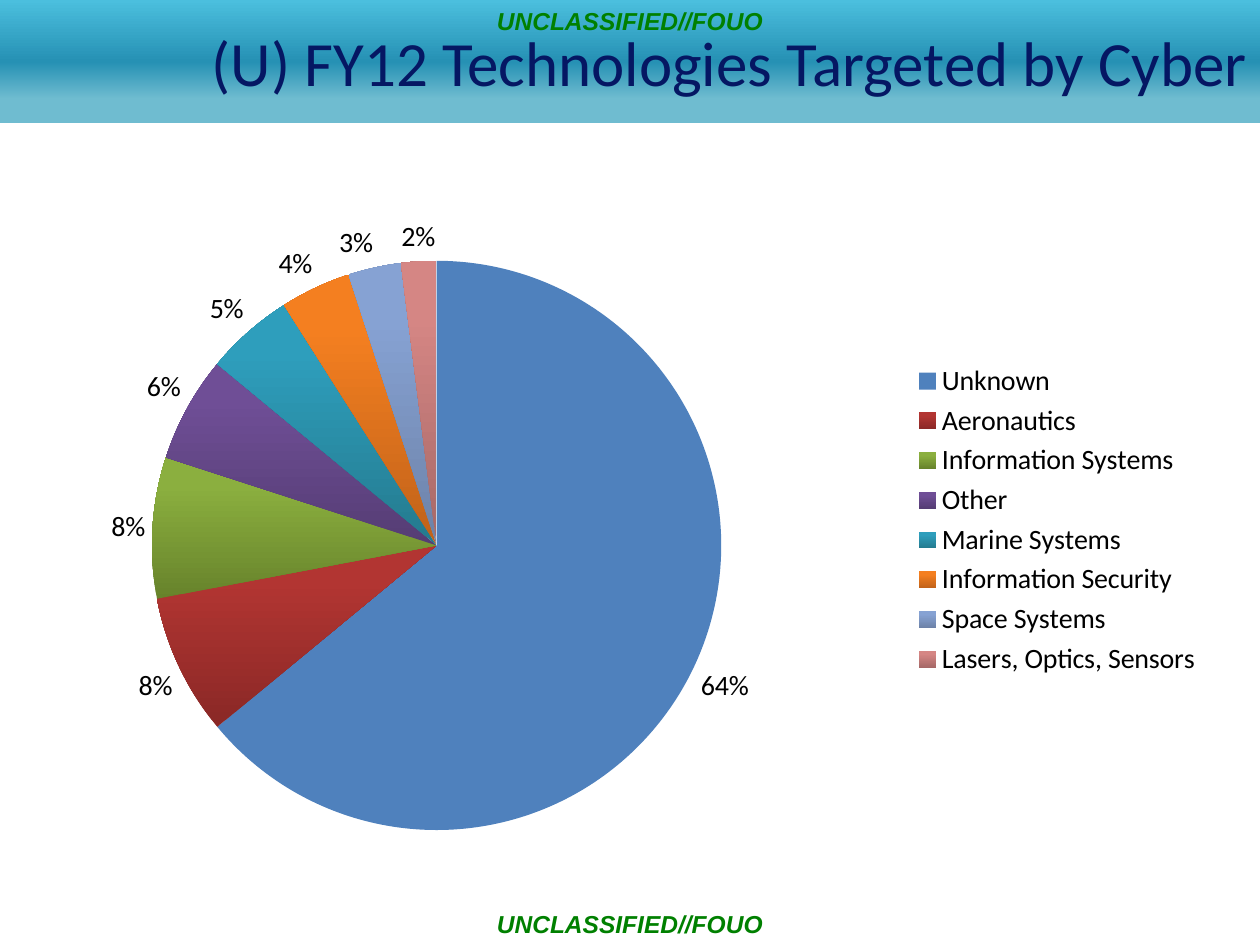
import copy

import pptx
import pptx.chart.data
import pptx.dml.color
import pptx.enum.chart
import pptx.enum.shapes
import pptx.enum.text
import pptx.oxml
import pptx.oxml.ns
import pptx.util

Pt = pptx.util.Pt

# Content
TITLE = "(U) FY12 Technologies Targeted by Cyber"
MARKING = "UNCLASSIFIED//FOUO"
# category, share, slice colour at the bottom, slice colour at the top
TARGETS = [
    ("Unknown", 0.64, "blue", "blue"),
    ("Aeronautics", 0.08, "red dark", "red"),
    ("Information Systems", 0.08, "green dark", "green"),
    ("Other", 0.06, "purple dark", "purple"),
    ("Marine Systems", 0.05, "teal dark", "teal"),
    ("Information Security", 0.04, "orange dark", "orange"),
    ("Space Systems", 0.03, "sky dark", "sky"),
    ("Lasers, Optics, Sensors", 0.02, "pink dark", "pink"),
]
COLORS = {
    "title": "051763", "marking": "008000", "text": "000000",
    "banner low": "6FBCD0", "banner mid": "2691B4", "banner top": "4BBFDE",
    "blue": "4F81BD",
    "red dark": "8A2826", "red": "B23532",
    "green dark": "67832B", "green": "8BAF3F",
    "purple dark": "553D74", "purple": "6F4E96",
    "teal dark": "247A8E", "teal": "2E9EBC",
    "orange dark": "C0621A", "orange": "F47F20",
    "sky dark": "6D82A8", "sky": "86A2D3",
    "pink dark": "A66867", "pink": "D58684",
}
BANNER_STOPS = [(0.15, "banner low"), (0.2, "banner low"),
                (0.5, "banner mid"), (1, "banner top")]
WIDTH, HEIGHT = 720, 540
BANNER_HEIGHT = 70.5
MARKING_HEIGHT = 24
PLOT_LAYOUT = {"x": 0.03, "y": 0.14, "w": 0.58, "h": 0.79}


def color(name):
    return pptx.dml.color.RGBColor.from_string(COLORS[name])


def set_stops(fill, stops):
    """Colour an upward gradient from (position, colour name) pairs."""
    fill.gradient_angle = 90
    for stop, (position, name) in zip(fill.gradient_stops, stops):
        stop.position = position
        stop.color.rgb = color(name)


def add_marking(page, top):
    box = page.shapes.add_textbox(0, Pt(top), Pt(WIDTH), Pt(MARKING_HEIGHT))
    box.text_frame.word_wrap = True
    para = box.text_frame.paragraphs[0]
    para.text = MARKING
    para.alignment = pptx.enum.text.PP_ALIGN.CENTER
    para.font.name, para.font.size = "Arial", Pt(14)
    para.font.bold = para.font.italic = True
    para.font.color.rgb = color("marking")


def add_banner(page):
    banner = page.shapes.add_shape(pptx.enum.shapes.MSO_SHAPE.RECTANGLE,
                                   0, 0, Pt(WIDTH), Pt(BANNER_HEIGHT))
    banner.shadow.inherit = False
    banner.line.fill.background()
    banner.fill.gradient()
    stop_list = banner._element.spPr.find(".//" + pptx.oxml.ns.qn("a:gsLst"))
    while len(stop_list) < len(BANNER_STOPS):
        stop_list.append(copy.deepcopy(stop_list[0]))
    set_stops(banner.fill, BANNER_STOPS)
    return banner


def add_title(page):
    title = page.shapes.title
    title.left, title.top = 0, 0
    title.width, title.height = Pt(WIDTH), Pt(BANNER_HEIGHT)
    frame = title.text_frame
    frame.text = TITLE
    frame.auto_size = pptx.enum.text.MSO_AUTO_SIZE.NONE
    frame.vertical_anchor = pptx.enum.text.MSO_ANCHOR.MIDDLE
    para = frame.paragraphs[0]
    para.alignment = pptx.enum.text.PP_ALIGN.RIGHT
    para.font.name, para.font.size = "Calibri", Pt(36)
    para.font.color.rgb = color("title")
    return title


def add_pie(page):
    data = pptx.chart.data.CategoryChartData(number_format="0%")
    data.categories = [target[0] for target in TARGETS]
    data.add_series("Series 1", [target[1] for target in TARGETS])
    chart = page.shapes.add_chart(pptx.enum.chart.XL_CHART_TYPE.PIE, Pt(40.3),
                                  Pt(91.4), Pt(653.8), Pt(411.8), data).chart
    chart.has_title = False
    chart.font.name, chart.font.size = "Calibri", Pt(16)
    chart.font.color.rgb = color("text")
    chart.has_legend = True
    chart.legend.position = pptx.enum.chart.XL_LEGEND_POSITION.RIGHT
    chart.legend.include_in_layout = False

    # Slices and their labels
    plot = chart.plots[0]
    plot.vary_by_categories = True
    for index, (_, _, bottom, top) in enumerate(TARGETS):
        fill = plot.series[0].points[index].format.fill
        if bottom == top:
            fill.solid()
            fill.fore_color.rgb = color(top)
        else:
            fill.gradient()
            set_stops(fill, [(0, bottom), (0.8, top)])
    labels = plot.series[0].data_labels
    labels.show_value = True
    labels.number_format, labels.number_format_is_linked = "0%", False
    labels.position = pptx.enum.chart.XL_LABEL_POSITION.OUTSIDE_END

    # Fixed place of the pie inside the chart
    area = chart._chartSpace.chart.plotArea
    for old in area.findall(pptx.oxml.ns.qn("c:layout")):
        area.remove(old)
    modes = '<c:xMode val="edge"/><c:yMode val="edge"/>'
    sizes = "".join(f'<c:{key} val="{value}"/>'
                    for key, value in PLOT_LAYOUT.items())
    area.insert(0, pptx.oxml.parse_xml(
        f'<c:layout {pptx.oxml.ns.nsdecls("c")}><c:manualLayout>'
        f'<c:layoutTarget val="inner"/>{modes}{sizes}'
        '</c:manualLayout></c:layout>'))


def main():
    deck = pptx.Presentation()
    deck.slide_width, deck.slide_height = Pt(WIDTH), Pt(HEIGHT)
    page = deck.slides.add_slide(deck.slide_layouts[5])
    title = add_title(page)
    banner = add_banner(page)
    title._element.addprevious(banner._element)  # banner behind the title
    for top in (0, HEIGHT - MARKING_HEIGHT):
        add_marking(page, top)
    add_pie(page)
    deck.save("out.pptx")


if __name__ == "__main__":
    main()
